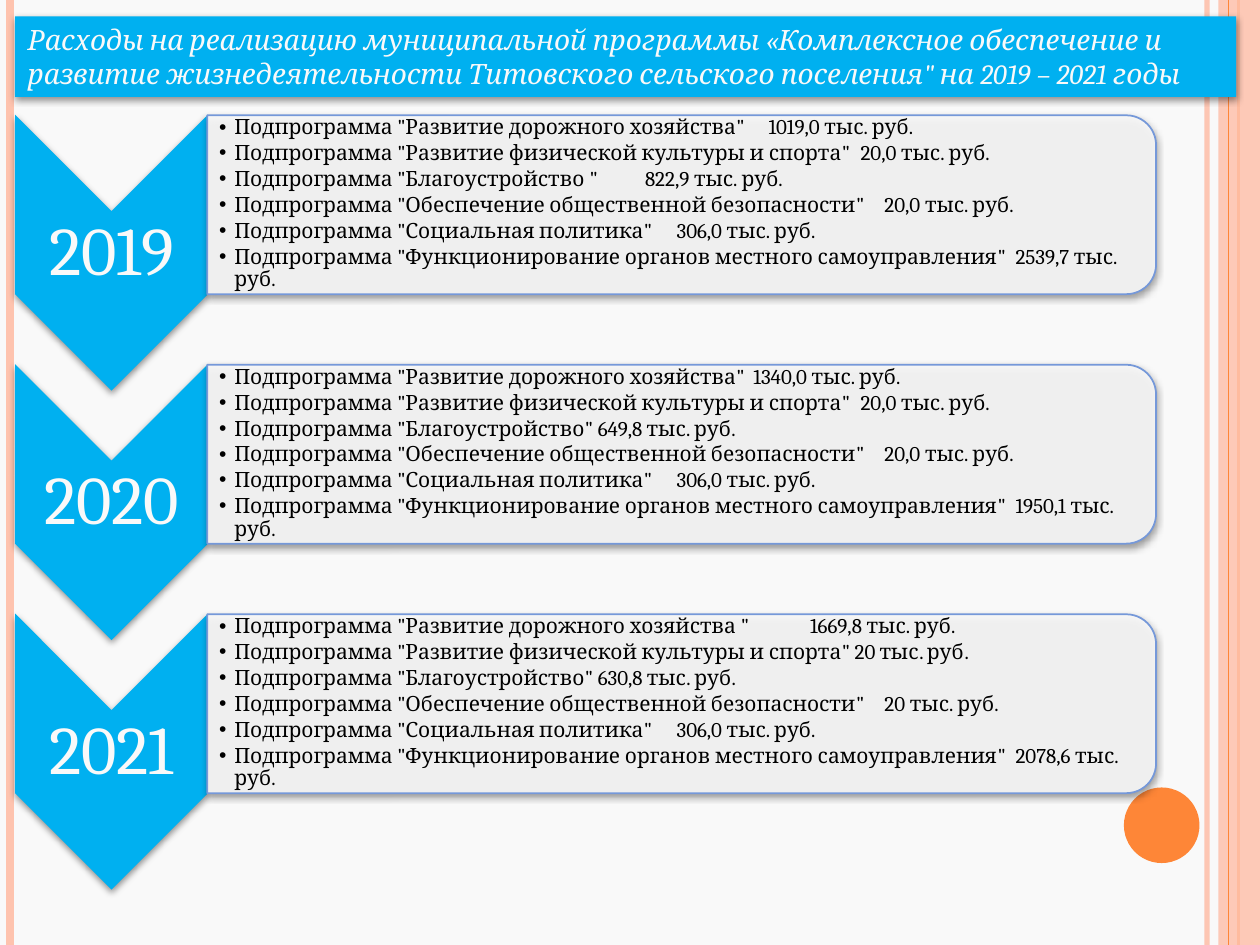
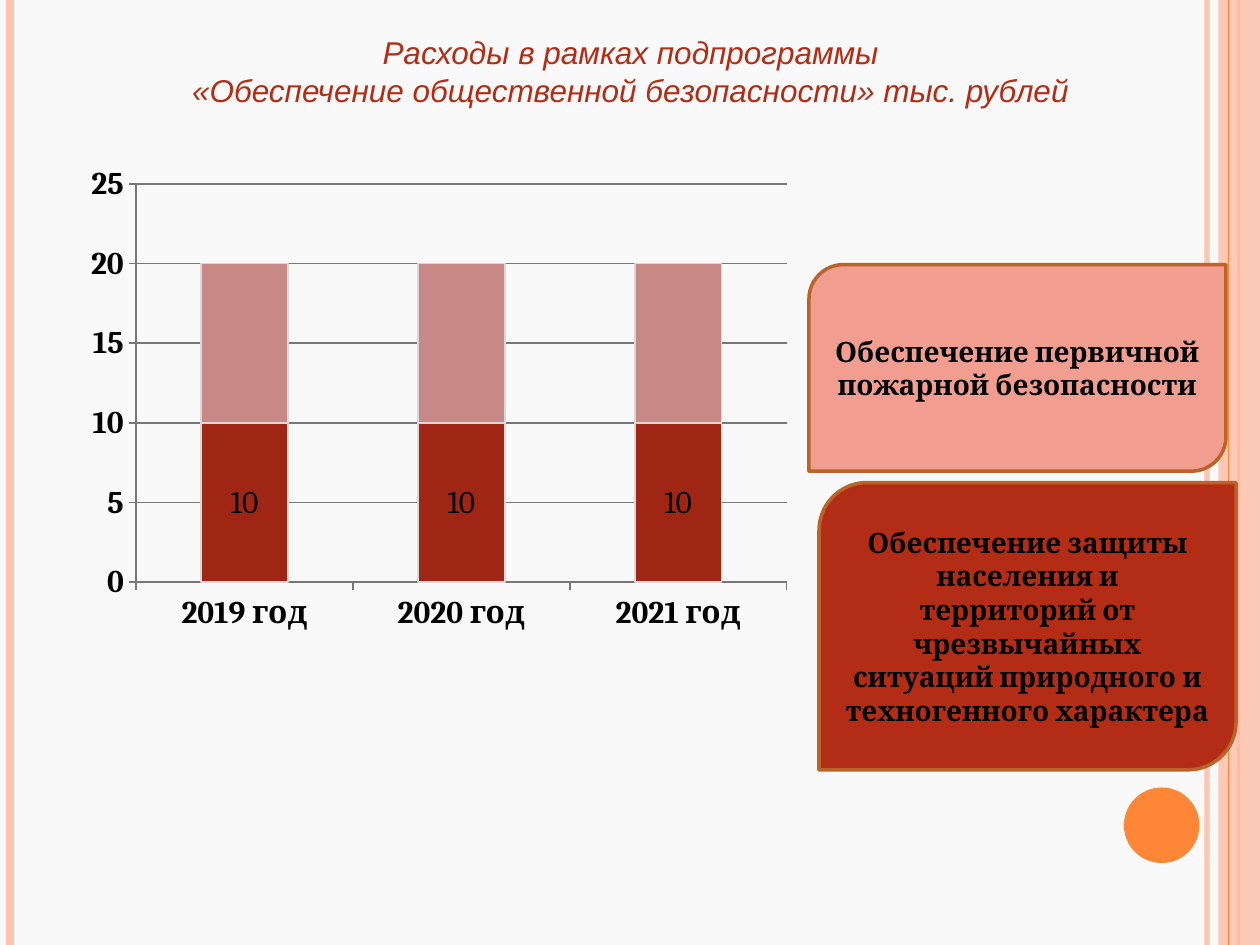
from lxml import etree
from pptx import Presentation
from pptx.chart.data import CategoryChartData
from pptx.dml.color import RGBColor
from pptx.enum.chart import XL_CHART_TYPE as ChartType, XL_TICK_MARK as Tick
from pptx.enum.shapes import MSO_CONNECTOR as Connector, MSO_SHAPE as Shape
from pptx.enum.text import MSO_ANCHOR as Anchor, MSO_AUTO_SIZE as AutoSize, PP_ALIGN as Align
from pptx.oxml import parse_xml
from pptx.oxml.ns import nsdecls, qn
from pptx.util import Inches, Pt

PALE, BLUE, PEACH, ORANGE = "F9F9F9", "00B0F0", "FEC3AE", "FE8637"
RED, PINK, BROWN, BLACK = "B32C16", "F19E91", "BC6329", "000000"
BAR_RED, BAR_PINK, BAR_EDGE, GRID = "9F2614", "C88886", "D9D9D9", "777777"
PANEL_EDGE = "7598D9"
SERIF, SANS = "Cambria", "Arial"
YEAR_STEP = 1.98

ROADS = "Развитие дорожного хозяйства"
SPORT = "Развитие физической культуры и спорта"
GROUNDS = "Благоустройство"
SAFETY = "Обеспечение общественной безопасности"
SOCIAL = "Социальная политика"
OFFICES = "Функционирование органов местного самоуправления"

BUDGETS = {
    "2019": [(ROADS, "1019,0", 4.36), (SPORT, "20,0", 5.09), (GROUNDS + " ", "822,9", 3.38),
             (SAFETY, "20,0", 5.28), (SOCIAL, "306,0", 3.63), (OFFICES, "2539,7", 6.32)],
    "2020": [(ROADS, "1340,0", 4.24), (SPORT, "20,0", 5.09), (GROUNDS, "649,8", None),
             (SAFETY, "20,0", 5.28), (SOCIAL, "306,0", 3.63), (OFFICES, "1950,1", 6.32)],
    "2021": [(ROADS + " ", "1669,8", 4.69), (SPORT, "20", None), (GROUNDS, "630,8", None),
             (SAFETY, "20", 5.28), (SOCIAL, "306,0", 3.63), (OFFICES, "2078,6", 6.32)],
}
FIRE = "Обеспечение первичной пожарной безопасности"
EMERGENCY = ("Обеспечение защиты населения и территорий от чрезвычайных ситуаций "
             "природного и техногенного характера")


def rgb(value):
    return RGBColor.from_string(value)


def box(left, top, width, height):
    return [Inches(side) for side in (left, top, width, height)]


def paint(fill, color, alpha=100):
    fill.solid()
    fill.fore_color.rgb = rgb(color)
    if alpha < 100:
        tone = fill._xPr.find(qn("a:solidFill"))[0]
        etree.SubElement(tone, qn("a:alpha")).set("val", str(alpha * 1000))


def stroke(line, color, width, alpha=100):
    line.width = Pt(width)
    line.fill.solid()
    line.fill.fore_color.rgb = rgb(color)
    if alpha < 100:
        tone = line._ln.find(qn("a:solidFill"))[0]
        etree.SubElement(tone, qn("a:alpha")).set("val", str(alpha * 1000))


def cast_shadow(shape):
    properties = shape._element.spPr
    for effects in properties.findall(qn("a:effectLst")):
        properties.remove(effects)
    properties.append(parse_xml(
        f'<a:effectLst {nsdecls("a")}><a:outerShdw blurRad="50800" dist="20320" '
        'dir="5400000" rotWithShape="0"><a:srgbClr val="000000">'
        '<a:alpha val="42000"/></a:srgbClr></a:outerShdw></a:effectLst>'))


class Deck:
    def __init__(self):
        self.prs = Presentation()
        self.prs.slide_width, self.prs.slide_height = Inches(10), Inches(7.5)
        paint(self.prs.slide_master.background.fill, PALE)
        self.slide = None

    def new_slide(self):
        self.slide = self.prs.slides.add_slide(self.prs.slide_layouts[5])
        self.rule(9.58, PEACH, 3, 93)
        self.rule(0.08, PEACH, 4.5)
        self.rule(9.83, ORANGE, 1.5)
        self.shape(Shape.RECTANGLE, box(9.67, 0, 0.33, 7.5), PEACH, alpha=87)
        self.rule(9.75, ORANGE, 0.75)
        self.shape(Shape.OVAL, box(8.92, 6.25, 0.6, 0.6), ORANGE)

    def rule(self, x, color, width, alpha=100):
        rule = self.slide.shapes.add_connector(
            Connector.STRAIGHT, Inches(x), 0, Inches(x), self.prs.slide_height)
        stroke(rule.line, color, width, alpha)
        etree.SubElement(rule._element.spPr, qn("a:effectLst"))

    def shape(self, kind, place, color, edge=None, alpha=100, rotation=0, shadow=False):
        shape = self.slide.shapes.add_shape(kind, *place)
        shape.rotation = rotation
        shape.shadow.inherit = False
        paint(shape.fill, color, alpha)
        if edge:
            stroke(shape.line, *edge)
        else:
            shape.line.fill.background()
        if shadow:
            cast_shadow(shape)
        return shape

    def frame(self, shape, anchor, insets=(0.1, 0.05, 0.1, 0.05)):
        frame = shape.text_frame
        frame.word_wrap = True
        frame.auto_size = AutoSize.NONE
        frame.vertical_anchor = anchor
        (frame.margin_left, frame.margin_top,
         frame.margin_right, frame.margin_bottom) = box(*insets)
        return frame

    def add_lines(self, frame, lines, size, color, align=Align.LEFT, font=SERIF,
                  bold=False, italic=False):
        for index, line in enumerate(lines):
            paragraph = frame.add_paragraph() if index else frame.paragraphs[0]
            paragraph.alignment = align
            run = paragraph.add_run()
            run.text = line
            run.font.name, run.font.size = font, Pt(size)
            run.font.bold, run.font.italic = bold, italic
            run.font.color.rgb = rgb(color)

    def title(self, place, lines, size, color, align, font, band=None):
        title = self.slide.shapes.title
        title.left, title.top, title.width, title.height = place
        if band:
            paint(title.fill, band)
            cast_shadow(title)
        self.slide.shapes.element.append(title.element)
        self.add_lines(self.frame(title, Anchor.TOP), lines, size, color, align, font,
                       italic=True)

    def text(self, place, lines, size, color, insets, align=Align.LEFT):
        frame = self.frame(self.slide.shapes.add_textbox(*place), Anchor.MIDDLE, insets)
        self.add_lines(frame, lines, size, color, align)
        for paragraph in frame.paragraphs:
            paragraph.line_spacing = 0.9
        return frame

    def bullet(self, paragraph, stop):
        paragraph.space_after = Pt(1.8)
        properties = paragraph._p.get_or_add_pPr()
        indent = Inches(0.12)
        properties.set("marL", str(indent))
        properties.set("indent", str(-indent))
        etree.SubElement(properties, qn("a:buFont")).set("typeface", SANS)
        etree.SubElement(properties, qn("a:buChar")).set("char", "•")
        if stop:
            stops = etree.SubElement(properties, qn("a:tabLst"))
            etree.SubElement(stops, qn("a:tab"), pos=str(Inches(stop)), algn="l")

    def year_block(self, top, year, budget):
        self.shape(Shape.CHEVRON, box(-0.21, top, 2.19, 1.53), BLUE, rotation=90, shadow=True)
        self.text(box(0.12, top + 0.44, 1.53, 0.66), [year], 39, PALE, [0.03] * 4, Align.CENTER)
        self.shape(Shape.ROUND_2_SAME_RECTANGLE, box(4.7, top - 3.38, 1.42, 7.53), PALE,
                   (PANEL_EDGE, 1), alpha=90, rotation=90, shadow=True)
        lines = [f'Подпрограмма "{name}"' + ("\t" if stop else " ") + f"{amount} тыс. руб."
                 for name, amount, stop in budget]
        frame = self.text(box(1.65, top - 0.26, 7.46, 1.28), lines, 12, BLACK,
                          (0.09, 0.01, 0.01, 0.01))
        for paragraph, (name, amount, stop) in zip(frame.paragraphs, budget):
            self.bullet(paragraph, stop)

    def legend_box(self, place, text, color):
        card = self.shape(Shape.ROUND_2_DIAG_RECTANGLE, place, color, (BROWN, 2))
        self.add_lines(self.frame(card, Anchor.MIDDLE), [text], 16, BLACK, Align.CENTER,
                       bold=True)

    def stacked_chart(self, place, years, series):
        data = CategoryChartData()
        data.categories = years
        for name, values, color in series:
            data.add_series(name, values)
        chart = self.slide.shapes.add_chart(ChartType.COLUMN_STACKED, *place, data).chart
        chart.has_legend = chart.has_title = False
        chart.font.name, chart.font.size = SERIF, Pt(18)
        chart.font.color.rgb = rgb(BLACK)
        for axis in (chart.category_axis, chart.value_axis):
            axis.major_tick_mark, axis.minor_tick_mark = Tick.OUTSIDE, Tick.NONE
            axis.tick_labels.font.bold = True
            stroke(axis.format.line, GRID, 1)
        scale = chart.value_axis
        scale.minimum_scale, scale.maximum_scale, scale.major_unit = 0, 25, 5
        scale.has_major_gridlines = True
        stroke(scale.major_gridlines.format.line, GRID, 1)
        plot = chart.plots[0]
        plot.gap_width, plot.overlap, plot.vary_by_categories = 150, 100, False
        for bars, (name, values, color) in zip(plot.series, series):
            paint(bars.format.fill, color)
            stroke(bars.format.line, BAR_EDGE, 1)
        plot.series[0].data_labels.show_value = True
        self.place_plot(chart, x=0.14, y=0.04, w=0.83, h=0.55)

    def place_plot(self, chart, **sides):
        area = chart._chartSpace.chart.plotArea
        for layout in area.findall(qn("c:layout")):
            area.remove(layout)
        settings = {"layoutTarget": "inner", "xMode": "edge", "yMode": "edge", **sides}
        rows = "".join(f'<c:{key} val="{value}"/>' for key, value in settings.items())
        area.insert(0, parse_xml(f'<c:layout {nsdecls("c")}><c:manualLayout>{rows}'
                                 '</c:manualLayout></c:layout>'))


def main():
    deck = Deck()

    deck.new_slide()
    for index, (year, budget) in enumerate(BUDGETS.items()):
        deck.year_block(1.24 + YEAR_STEP * index, year, budget)
    deck.title(box(0.12, 0.13, 9.69, 0.64),
               ["Расходы на реализацию муниципальной программы «Комплексное обеспечение и "
                "развитие жизнедеятельности Титовского сельского поселения\" на 2019 – 2021 годы"],
               16, PALE, Align.LEFT, SERIF, band=BLUE)

    deck.new_slide()
    deck.title(box(0.28, 0.21, 9.45, 0.71),
               ["Расходы в рамках подпрограммы", f"«{SAFETY}» тыс. рублей"],
               18, RED, Align.CENTER, SANS)
    deck.stacked_chart(box(0.21, 1.23, 6.22, 5.75), [f"{year} год" for year in BUDGETS],
                       [(EMERGENCY, [10] * 3, BAR_RED), (FIRE, [10] * 3, BAR_PINK)])
    deck.legend_box(box(6.5, 3.83, 3.31, 2.28), EMERGENCY, RED)
    deck.legend_box(box(6.42, 2.1, 3.31, 1.64), FIRE, PINK)

    deck.prs.save("out.pptx")


if __name__ == "__main__":
    main()
